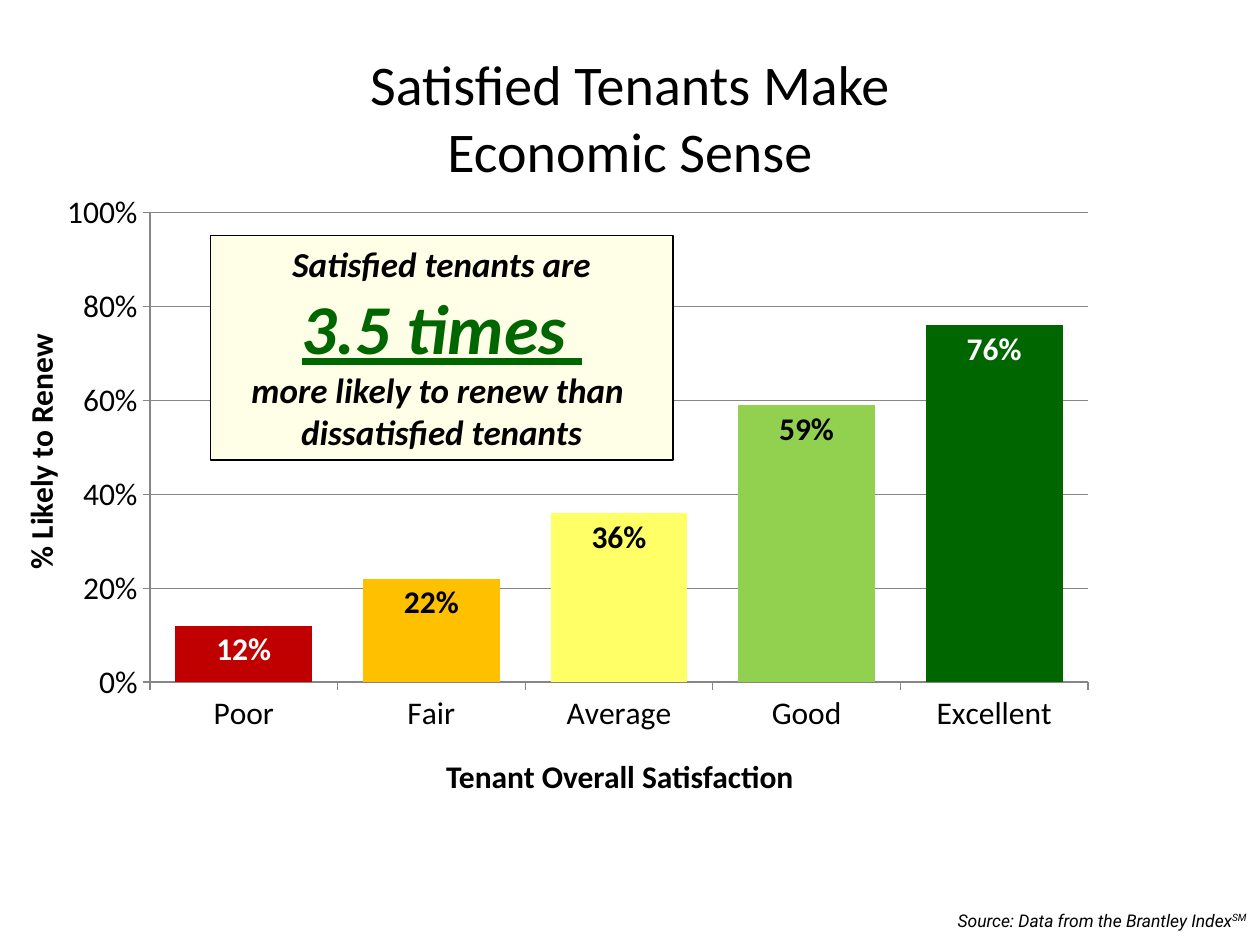
from dataclasses import dataclass

import pptx
import pptx.chart.data
import pptx.dml.color
import pptx.enum.chart
import pptx.enum.shapes
import pptx.enum.text
import pptx.oxml
import pptx.oxml.ns
import pptx.util

WIDTH = pptx.util.Inches(10)
HEIGHT = pptx.util.Inches(7.5)
BLACK, WHITE, GREEN, GRAY = "000000", "FFFFFF", "006600", "868686"
CENTER = pptx.enum.text.PP_ALIGN.CENTER
RIGHT = pptx.enum.text.PP_ALIGN.RIGHT
TOP = pptx.enum.text.MSO_ANCHOR.TOP
MIDDLE = pptx.enum.text.MSO_ANCHOR.MIDDLE


@dataclass
class Area:
    left: float
    top: float
    width: float
    height: float

    def place(self) -> tuple:
        return (
            round(WIDTH * self.left / 100),
            round(HEIGHT * self.top / 100),
            round(WIDTH * self.width / 100),
            round(HEIGHT * self.height / 100),
        )


@dataclass
class Rating:
    name: str
    renewal: float
    fill: str
    label: str


RATINGS = [
    Rating("Poor", 0.12, "C00000", WHITE),
    Rating("Fair", 0.22, "FFC000", BLACK),
    Rating("Average", 0.36, "FFFF66", BLACK),
    Rating("Good", 0.59, "92D050", BLACK),
    Rating("Excellent", 0.76, GREEN, WHITE),
]


def rgb(value: str) -> pptx.dml.color.RGBColor:
    return pptx.dml.color.RGBColor.from_string(value)


def paint(part, value: str) -> None:
    part.fill.solid()
    part.fill.fore_color.rgb = rgb(value)


def style(font, size=18, color=BLACK, face="Calibri", bold=False, italic=False, underline=False) -> None:
    font.size = pptx.util.Pt(size)
    font.name = face
    font.bold = bold
    font.italic = italic
    font.underline = underline
    font.color.rgb = rgb(color)


def write(shape, text: str, new_line=True, align=CENTER, raised=False, **look) -> None:
    frame = shape.text_frame
    paragraph = frame.paragraphs[-1]
    if new_line and paragraph.runs:
        paragraph = frame.add_paragraph()
    paragraph.alignment = align
    run = paragraph.add_run()
    run.text = text
    style(run.font, **look)
    if raised:
        properties = list(shape.element.iter(pptx.oxml.ns.qn("a:rPr")))
        properties[-1].set("baseline", "30000")


def prepare(shape, anchor=TOP, padded=True, grow=True):
    frame = shape.text_frame
    frame.word_wrap = True
    frame.vertical_anchor = anchor
    if grow:
        frame.auto_size = pptx.enum.text.MSO_AUTO_SIZE.SHAPE_TO_FIT_TEXT
    if not padded:
        frame.margin_left = frame.margin_right = 0
        frame.margin_top = frame.margin_bottom = 0
    return shape


def add_text(slide, area: Area, **layout):
    return prepare(slide.shapes.add_textbox(*area.place()), **layout)


def set_plot_area(chart, left: float, top: float, width: float, height: float) -> None:
    namespace = pptx.oxml.ns.nsdecls("c")
    sizes = {"x": left, "y": top, "w": width, "h": height}
    modes = '<c:layoutTarget val="inner"/><c:xMode val="edge"/><c:yMode val="edge"/>'
    values = "".join(f'<c:{key} val="{value}"/>' for key, value in sizes.items())
    layout = pptx.oxml.parse_xml(
        f"<c:layout {namespace}><c:manualLayout>{modes}{values}</c:manualLayout></c:layout>"
    )
    plot_area = chart.element.find(".//" + pptx.oxml.ns.qn("c:plotArea"))
    for previous in plot_area.findall(pptx.oxml.ns.qn("c:layout")):
        plot_area.remove(previous)
    plot_area.insert(0, layout)


def style_axis(axis) -> None:
    axis.major_tick_mark = pptx.enum.chart.XL_TICK_MARK.OUTSIDE
    axis.minor_tick_mark = pptx.enum.chart.XL_TICK_MARK.NONE
    axis.format.line.color.rgb = rgb(GRAY)
    style(axis.tick_labels.font)


def add_renewal_chart(slide, area: Area) -> None:
    data = pptx.chart.data.CategoryChartData(number_format="0%")
    data.categories = [rating.name for rating in RATINGS]
    data.add_series("Series 1", [rating.renewal for rating in RATINGS])
    kind = pptx.enum.chart.XL_CHART_TYPE.COLUMN_CLUSTERED
    chart = slide.shapes.add_chart(kind, *area.place(), data).chart
    chart.has_legend = False
    chart.has_title = False
    style(chart.font)
    set_plot_area(chart, 0.13, 0.11, 0.82, 0.71)

    style_axis(chart.category_axis)
    chart.category_axis.has_major_gridlines = False
    chart.category_axis.tick_label_position = pptx.enum.chart.XL_TICK_LABEL_POSITION.LOW
    renewal_axis = chart.value_axis
    style_axis(renewal_axis)
    renewal_axis.minimum_scale = 0
    renewal_axis.maximum_scale = 1
    renewal_axis.major_unit = 0.2
    renewal_axis.has_major_gridlines = True
    renewal_axis.major_gridlines.format.line.color.rgb = rgb(GRAY)
    renewal_axis.tick_labels.number_format = "0%"
    renewal_axis.tick_labels.number_format_is_linked = False

    plot = chart.plots[0]
    plot.gap_width = 37
    plot.vary_by_categories = False
    series = plot.series[0]
    paint(series.format, "218ACB")
    inside_end = pptx.enum.chart.XL_LABEL_POSITION.INSIDE_END
    labels = series.data_labels
    labels.show_value = True
    labels.number_format = "0%"
    labels.number_format_is_linked = False
    labels.position = inside_end
    style(labels.font, bold=True)
    for index, rating in enumerate(RATINGS):
        point = series.points[index]
        paint(point.format, rating.fill)
        style(point.data_label.font, color=rating.label, bold=True)
        point.data_label.position = inside_end


def add_callout(slide, area: Area) -> None:
    rectangle = pptx.enum.shapes.MSO_SHAPE.RECTANGLE
    callout = prepare(slide.shapes.add_shape(rectangle, *area.place()), anchor=MIDDLE)
    callout.shadow.inherit = False
    paint(callout, "FFFFE7")
    callout.line.color.rgb = rgb(BLACK)
    callout.line.width = pptx.util.Pt(1)
    emphasis = {"bold": True, "italic": True}
    write(callout, "Satisfied tenants are", size=20, **emphasis)
    write(callout, "3.5 times ", size=40, color=GREEN, underline=True, **emphasis)
    for text in ("more likely to renew than ", "dissatisfied tenants"):
        write(callout, text, size=20, **emphasis)


def main() -> None:
    presentation = pptx.Presentation()
    presentation.slide_width = WIDTH
    presentation.slide_height = HEIGHT
    slide = presentation.slides.add_slide(presentation.slide_layouts[6])

    add_renewal_chart(slide, Area(0.1, 14.8, 90.8, 70))

    renewal_title = add_text(slide, Area(1.7, 22.27, 3, 51.07), padded=False)
    body = renewal_title.element.find(".//" + pptx.oxml.ns.qn("a:bodyPr"))
    body.set("vert", "vert270")
    write(renewal_title, "% Likely to Renew", bold=True)
    satisfaction_title = add_text(slide, Area(11.7, 80.13, 75, 4), padded=False)
    write(satisfaction_title, "Tenant Overall Satisfaction", bold=True)

    add_callout(slide, Area(16.7, 24.93, 36.7, 23.73))

    headline = add_text(slide, Area(5, 4, 90, 16.67), anchor=MIDDLE, grow=False)
    for text in ("Satisfied Tenants Make", "Economic Sense"):
        write(headline, text, size=32)

    credit = add_text(slide, Area(72, 95.6, 27.9, 3.6))
    small = {"size": 10, "face": "Roboto", "italic": True, "align": RIGHT}
    write(credit, "Source: Data from the Brantley Index", **small)
    write(credit, "SM", new_line=False, raised=True, **small)

    presentation.save("out.pptx")


if __name__ == "__main__":
    main()
